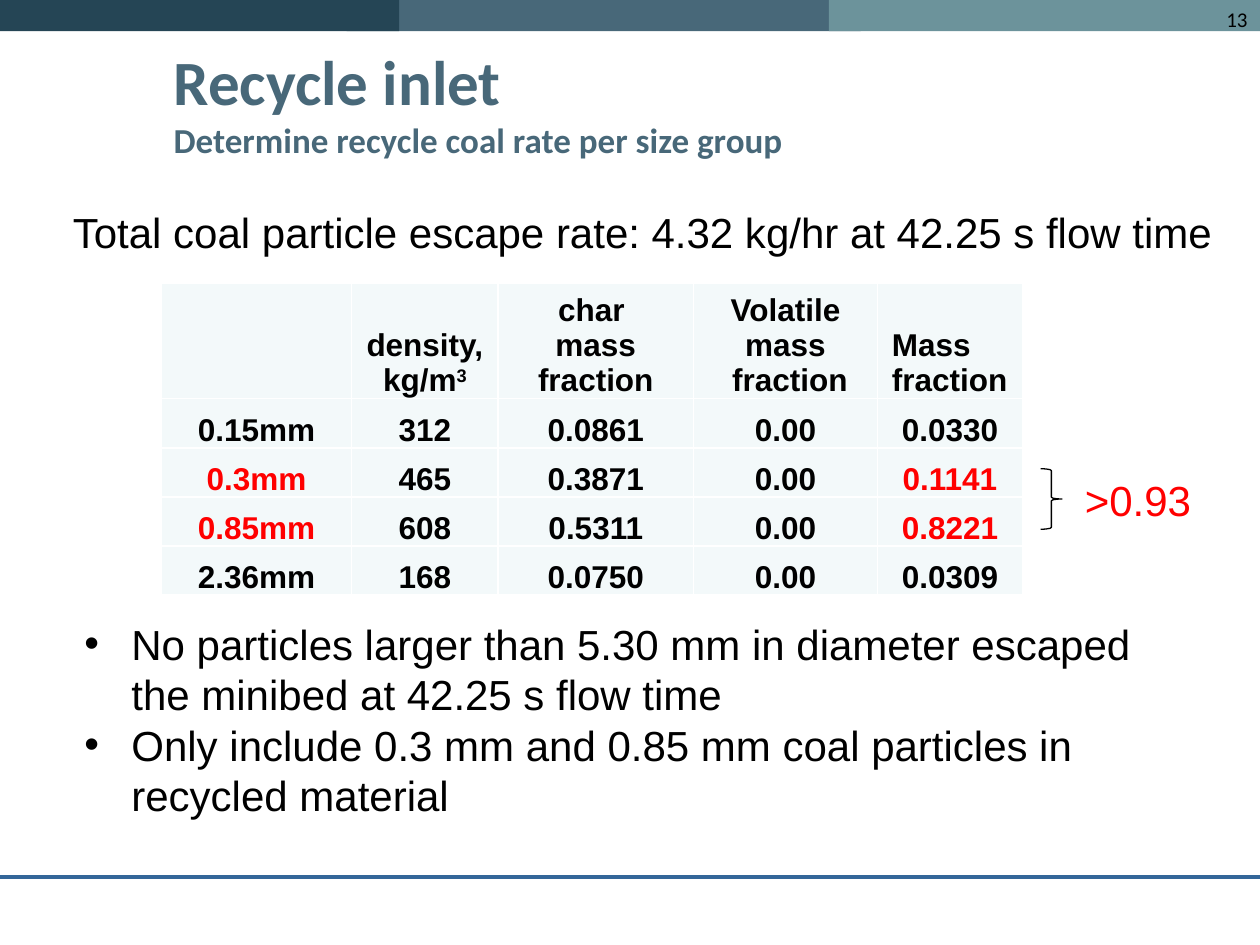
from lxml import etree
from pptx import Presentation
from pptx.dml.color import RGBColor
from pptx.enum import shapes, text
from pptx.oxml import ns
from pptx.util import Cm, Pt

BLACK, WHITE, RED = "000000", "FFFFFF", "FF0000"
SLATE, NAVY, TEAL, BLUE, PALE = "486879", "254555", "6C939B", "336699", "F3F9FA"
LEFT, CENTER, RIGHT = (text.PP_ALIGN.LEFT, text.PP_ALIGN.CENTER, text.PP_ALIGN.RIGHT)

TOP_BARS = [(6.99, 10.36, SLATE), (0, 8.05, NAVY), (16.71, 8.69, TEAL)]  # left, width, fill
TITLE = "Recycle inlet"
SUBTITLE = "Determine recycle coal rate per size group"
ESCAPE_RATE = "Total coal particle escape rate: 4.32 kg/hr at 42.25 s flow time"
HEADERS = [[], ["density,", "kg/m³"], ["char ", "mass fraction"],
           ["Volatile mass", " fraction"], ["Mass", "fraction"]]
SIZE_GROUPS = [
    ("0.15mm", "312", "0.0861", "0.00", "0.0330"),
    ("0.3mm", "465", "0.3871", "0.00", "0.1141"),
    ("0.85mm", "608", "0.5311", "0.00", "0.8221"),
    ("2.36mm", "168", "0.0750", "0.00", "0.0309"),
]
RECYCLED = ("0.3mm", "0.85mm")
COLUMN_WIDTHS = [3.84, 2.95, 3.94, 3.71, 2.92]
HEADER_HEIGHT, ROW_HEIGHT = 2.28, 0.99
FINDINGS = [
    "No particles larger than 5.30 mm in diameter escaped the minibed at 42.25 s flow time",
    "Only include 0.3 mm and 0.85 mm coal particles in recycled material",
]


def rgb(value):
    return RGBColor.from_string(value)


def add_xml(parent, tag, **attributes):
    return etree.SubElement(parent, ns.qn(tag), attributes)


def add_run(paragraph, words, size=24, font="Arial", color=BLACK, bold=False):
    run = paragraph.add_run()
    run.text = words
    run.font.size, run.font.name, run.font.bold = Pt(size), font, bold
    run.font.color.rgb = rgb(color)
    return run


def add_text(slide, words, box, align=LEFT, wrap=True, bullet=False, **style):
    """Add a text box with one paragraph for each item of words."""
    frame = slide.shapes.add_textbox(*map(Cm, box)).text_frame
    frame.word_wrap = wrap
    for index, line in enumerate(words):
        paragraph = frame.add_paragraph() if index else frame.paragraphs[0]
        paragraph.alignment = align
        if bullet:
            properties = paragraph._p.get_or_add_pPr()
            properties.set("marL", str(Cm(0.95)))
            properties.set("indent", str(-Cm(0.95)))
            add_xml(properties, "a:buFont", typeface="Arial")
            add_xml(properties, "a:buChar", char="•")
        add_run(paragraph, line, **style)
    return frame


def add_bars(slide):
    for left, width, fill in TOP_BARS:
        bar = slide.shapes.add_shape(shapes.MSO_SHAPE.RECTANGLE, Cm(left), 0, Cm(width), Cm(0.63))
        bar.shadow.inherit = False
        bar.fill.solid()
        bar.fill.fore_color.rgb = rgb(fill)
        bar.line.fill.background()


def add_footer_line(slide):
    line = slide.shapes.add_connector(
        shapes.MSO_CONNECTOR.STRAIGHT, Cm(25.4), Cm(17.68), 0, Cm(17.68))
    line.line.color.rgb = rgb(BLUE)
    line.line.width = Pt(2.25)
    add_xml(line._element.spPr, "a:effectLst")


def fill_cell(cell, lines, color=BLACK, align=CENTER, margin=0.03):
    cell.vertical_anchor = text.MSO_ANCHOR.BOTTOM
    cell.margin_left, cell.margin_right = Cm(margin), Cm(0.03)
    cell.margin_top, cell.margin_bottom = Cm(0.03), 0
    properties = cell._tc.get_or_add_tcPr()
    for side in ("a:lnL", "a:lnR", "a:lnT", "a:lnB"):
        border = add_xml(properties, side, w=str(Pt(1)))
        add_xml(add_xml(border, "a:solidFill"), "a:srgbClr", val=WHITE)
    cell.fill.solid()
    cell.fill.fore_color.rgb = rgb(PALE)
    for index, line in enumerate(lines):
        frame = cell.text_frame
        paragraph = frame.add_paragraph() if index else frame.paragraphs[0]
        paragraph.alignment = align
        style = dict(size=18, color=color, bold=True)
        add_run(paragraph, line.rstrip("³"), **style)
        if line.endswith("³"):
            add_run(paragraph, "3", **style).font._element.set("baseline", "30000")


def add_size_table(slide):
    row_count, column_count = len(SIZE_GROUPS) + 1, len(HEADERS)
    height = HEADER_HEIGHT + ROW_HEIGHT * len(SIZE_GROUPS)
    table = slide.shapes.add_table(row_count, column_count, Cm(3.25), Cm(5.72),
                                   Cm(sum(COLUMN_WIDTHS)), Cm(height)).table
    for column, width in zip(table.columns, COLUMN_WIDTHS):
        column.width = Cm(width)
    for index, row in enumerate(table.rows):
        row.height = Cm(ROW_HEIGHT if index else HEADER_HEIGHT)
    last = column_count - 1
    for column, lines in enumerate(HEADERS):
        layout = dict(align=LEFT, margin=0.29) if column == last else {}
        fill_cell(table.cell(0, column), lines, **layout)
    for row, group in enumerate(SIZE_GROUPS, start=1):
        for column, value in enumerate(group):
            marked = group[0] in RECYCLED and column in (0, last)
            fill_cell(table.cell(row, column), [value], color=RED if marked else BLACK)


def add_brace(slide):
    brace = slide.shapes.add_shape(
        shapes.MSO_SHAPE.RIGHT_BRACE, Cm(20.98), Cm(9.45), Cm(0.43), Cm(1.22))
    brace.shadow.inherit = False
    brace.fill.background()
    brace.line.color.rgb = rgb(BLACK)
    brace.line.width = Pt(0.75)


def add_title(slide):
    frame = add_text(slide, [TITLE], (3.25, 0.46, 20.42, 3.18),
                     size=36, font="Calibri", color=SLATE, bold=True)
    frame.vertical_anchor = text.MSO_ANCHOR.MIDDLE
    paragraph = frame.paragraphs[0]
    paragraph.add_line_break()
    add_run(paragraph, SUBTITLE, size=20, font="Calibri", color=SLATE, bold=True)


def main():
    presentation = Presentation()
    presentation.slide_width, presentation.slide_height = Cm(25.4), Cm(19.05)
    slide = presentation.slides.add_slide(presentation.slide_layouts[6])
    add_bars(slide)
    add_text(slide, ["13"], (19.48, 0, 5.92, 1.32), align=RIGHT, size=12, font="Calibri")
    add_footer_line(slide)
    add_text(slide, [ESCAPE_RATE], (1.22, 4.04, 23.7, 2.31), wrap=False)
    add_size_table(slide)
    add_text(slide, FINDINGS, (1.45, 12.34, 22.5, 4.37), bullet=True)
    add_brace(slide)
    add_text(slide, [">0.93"], (21.62, 9.45, 2.67, 1.3), wrap=False, color=RED)
    add_title(slide)
    presentation.save("out.pptx")


if __name__ == "__main__":
    main()
